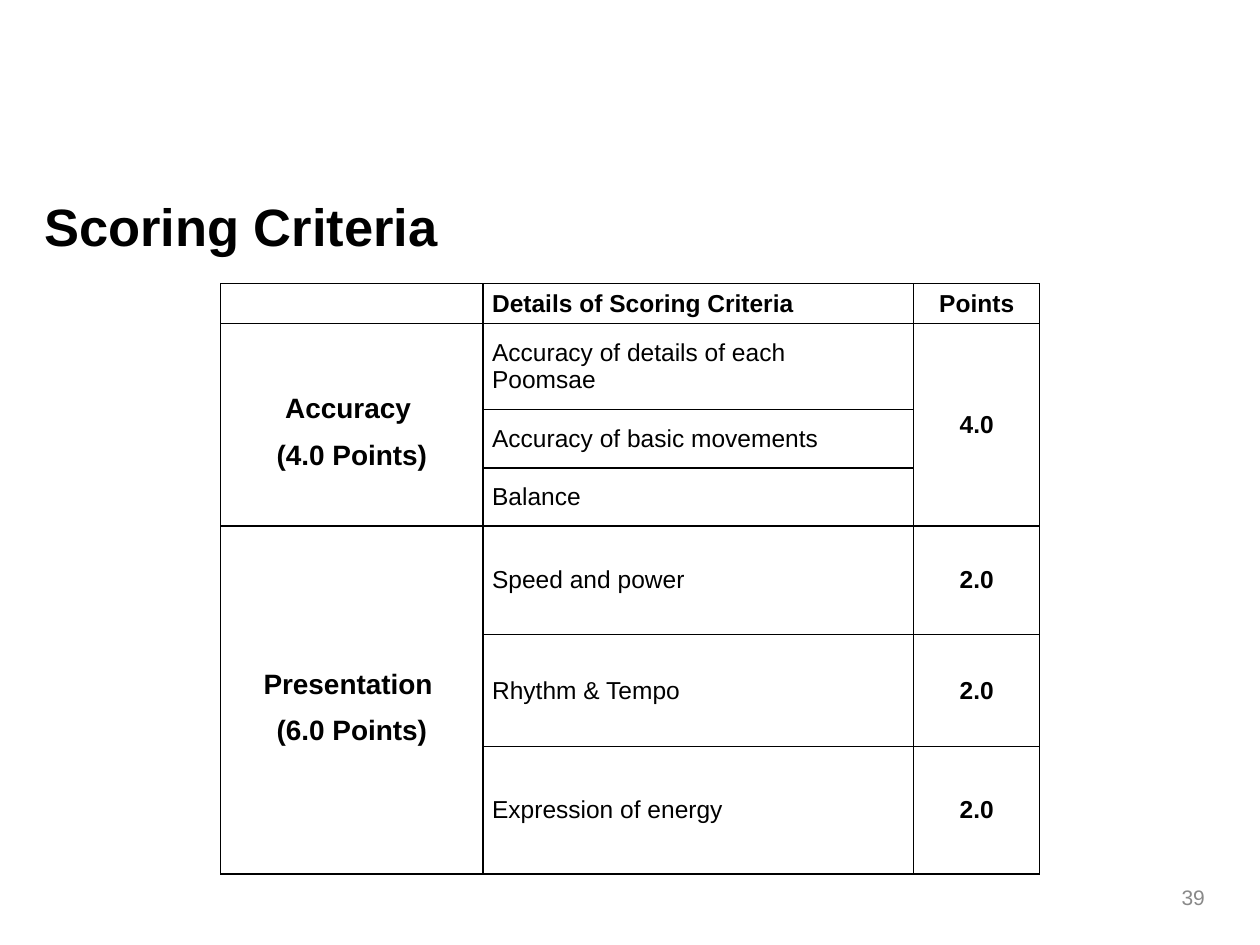
from lxml import etree
from pptx import Presentation
from pptx import util as u
from pptx.dml import color
from pptx.enum import text
from pptx.oxml import ns

FONT = "Arial"
BLACK, GREY = "000000", "898989"
LEFT, CENTER, RIGHT = text.PP_ALIGN.LEFT, text.PP_ALIGN.CENTER, text.PP_ALIGN.RIGHT

TITLE = "Scoring Criteria"
PAGE_NUMBER = "39"
HEADINGS = ["", "Details of Scoring Criteria", "Points"]
GROUPS = [
    (["Accuracy ", "(4.0 Points)"],
     [(["Accuracy of details of each", "Poomsae"], "4.0"),
      (["Accuracy of basic movements"], None),
      (["Balance"], None)]),
    (["Presentation ", "(6.0 Points)"],
     [(["Speed and power"], "2.0"),
      (["Rhythm & Tempo"], "2.0"),
      (["Expression of energy"], "2.0")]),
]
COLUMN_WIDTHS = [5.29, 8.68, 2.54]
ROW_HEIGHTS = [0.8, 1.74, 1.17, 1.17, 2.19, 2.26, 2.57]


def write(frame, lines, size, bold=False, align=LEFT, spacing=None, fill=BLACK):
    paragraph = frame.paragraphs[0]
    paragraph.alignment = align
    if spacing:
        paragraph.line_spacing = spacing
    for index, line in enumerate(lines):
        if index:
            paragraph.add_line_break()
        run = paragraph.add_run()
        run.text = line
        run.font.name = FONT
        run.font.size = u.Pt(size)
        run.font.bold = bold
        run.font.color.rgb = color.RGBColor.from_string(fill)


def add_text(slide, box, lines, size, **style):
    frame = slide.shapes.add_textbox(*(u.Cm(value) for value in box)).text_frame
    frame.word_wrap = True
    frame.vertical_anchor = text.MSO_ANCHOR.MIDDLE
    write(frame, lines, size, **style)


def format_cell(cell):
    cell.margin_left = cell.margin_right = u.Cm(0.18)
    cell.margin_top = cell.margin_bottom = 0
    cell.vertical_anchor = text.MSO_ANCHOR.MIDDLE
    properties = cell._tc.get_or_add_tcPr()
    for side in ("lnL", "lnR", "lnT", "lnB"):
        line = etree.SubElement(properties, ns.qn(f"a:{side}"), w=str(u.Pt(1)))
        solid = etree.SubElement(line, ns.qn("a:solidFill"))
        etree.SubElement(solid, ns.qn("a:srgbClr"), val=BLACK)
    cell.fill.background()


def add_criteria_table(slide):
    table = slide.shapes.add_table(
        len(ROW_HEIGHTS), len(COLUMN_WIDTHS), u.Cm(4.45), u.Cm(5.72),
        u.Cm(sum(COLUMN_WIDTHS)), u.Cm(sum(ROW_HEIGHTS))).table
    table.first_row = table.horz_banding = False
    for column, width in zip(table.columns, COLUMN_WIDTHS):
        column.width = u.Cm(width)
    for row, height in zip(table.rows, ROW_HEIGHTS):
        row.height = u.Cm(height)
    for cell in table.iter_cells():
        format_cell(cell)

    for column, heading in enumerate(HEADINGS):
        if heading:
            write(table.cell(0, column).text_frame, [heading], 14, bold=True,
                  align=CENTER if column == 2 else LEFT)

    first = 1
    for name, criteria in GROUPS:
        last = first + len(criteria) - 1
        table.cell(first, 0).merge(table.cell(last, 0))
        write(table.cell(first, 0).text_frame, name, 16, bold=True,
              align=CENTER, spacing=1.5)
        if criteria[-1][1] is None:
            table.cell(first, 2).merge(table.cell(last, 2))
        for row, (detail, points) in enumerate(criteria, first):
            write(table.cell(row, 1).text_frame, detail, 14)
            if points:
                write(table.cell(row, 2).text_frame, [points], 14, bold=True, align=CENTER)
        first = last + 1


def main():
    presentation = Presentation()
    presentation.slide_width, presentation.slide_height = u.Cm(25.4), u.Cm(19.05)
    slide = presentation.slides.add_slide(presentation.slide_layouts[6])
    add_text(slide, (0.64, 3.38, 24.13, 2.34), [TITLE], 30, bold=True)
    add_text(slide, (18.62, 17.58, 5.92, 1.02), [PAGE_NUMBER], 12, align=RIGHT, fill=GREY)
    add_criteria_table(slide)
    presentation.save("out.pptx")


if __name__ == "__main__":
    main()
